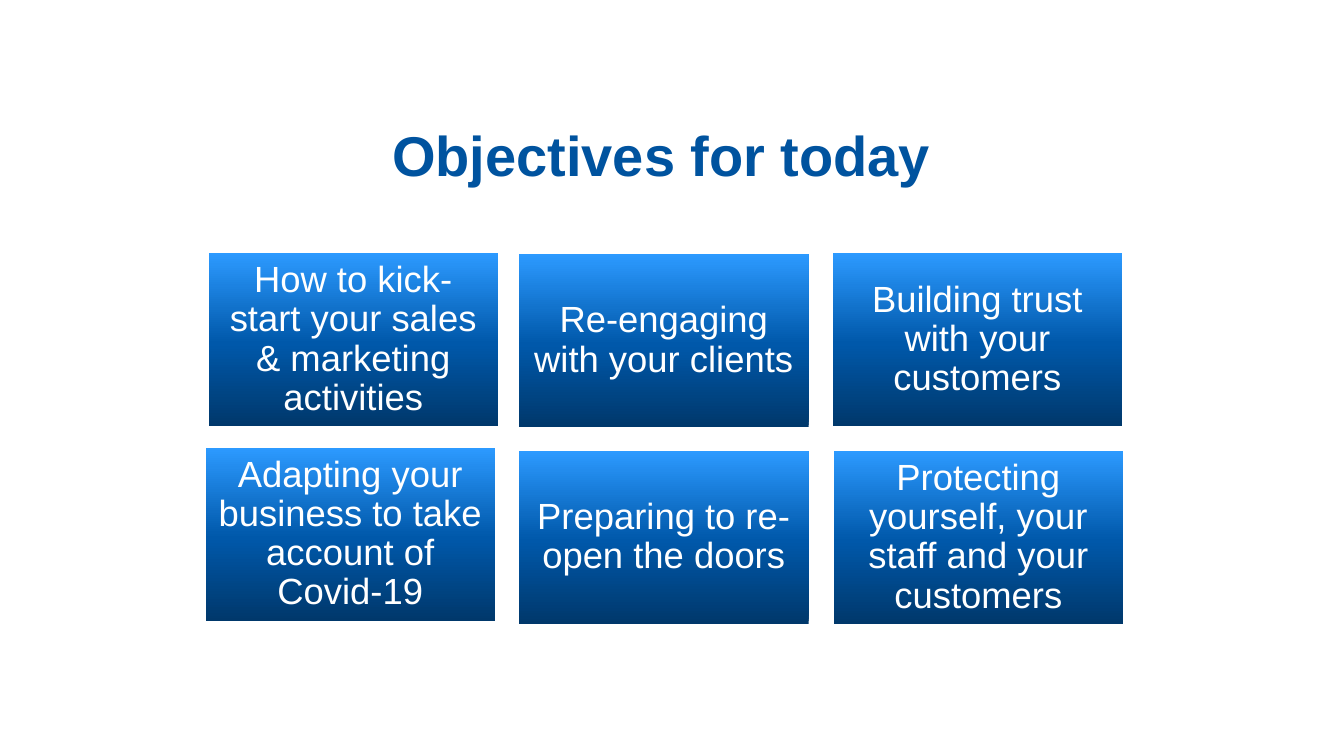
from copy import deepcopy
from pptx import Presentation
from pptx.dml.color import RGBColor
from pptx.enum import shapes, text
from pptx.oxml.ns import qn
from pptx.util import Inches, Pt

NAVY = RGBColor(0x00, 0x38, 0x6B)
BLUE = RGBColor(0x00, 0x58, 0xAA)
SKY = RGBColor(0x2C, 0x9A, 0xFF)
TITLE = RGBColor(0x00, 0x53, 0x9F)
WHITE = RGBColor(0xFF, 0xFF, 0xFF)

deck = Presentation()
deck.slide_width, deck.slide_height = Inches(13.33), Inches(7.5)
slide = deck.slides.add_slide(deck.slide_layouts[6])


def write(frame, words, size, color, pad):
    frame.word_wrap = True
    frame.margin_left = frame.margin_right = Inches(pad)
    frame.margin_top = frame.margin_bottom = Inches(pad)
    para = frame.paragraphs[0]
    para.text = words
    para.line_spacing = 0.9
    para.font.name = "Arial"
    para.font.size = Pt(size)
    para.font.color.rgb = color
    return para


title = slide.shapes.add_textbox(Inches(3.89), Inches(1.27), Inches(5.55), Inches(0.53))
write(title.text_frame, "Objectives for today", 40, TITLE, 0).font.bold = True

goals = [
    (2.07, 2.51, "How to kick-start your sales & marketing activities"),
    (5.15, 2.52, "Re-engaging with your clients"),
    (8.26, 2.51, "Building trust with your customers"),
    (2.04, 4.44, "Adapting your business to take account of Covid-19"),
    (5.15, 4.47, "Preparing to re-open the doors"),
    (8.27, 4.47, "Protecting yourself, your staff and your customers"),
]
for left, top, words in goals:
    box = slide.shapes.add_shape(
        shapes.MSO_SHAPE.RECTANGLE, Inches(left), Inches(top), Inches(2.87), Inches(1.72))
    box.shadow.inherit = False
    box.line.fill.background()
    box.fill.gradient()
    box.fill.gradient_angle = 90
    stops = box._element.spPr.find(".//" + qn("a:gsLst"))
    stops.append(deepcopy(stops[0]))
    for stop, place, color in zip(box.fill.gradient_stops, (0, 0.48, 1), (NAVY, BLUE, SKY)):
        stop.position = place
        stop.color.rgb = color
    box.text_frame.vertical_anchor = text.MSO_ANCHOR.MIDDLE
    para = write(box.text_frame, words, 26, WHITE, 0.11)
    para.alignment = text.PP_ALIGN.CENTER

deck.save("out.pptx")
